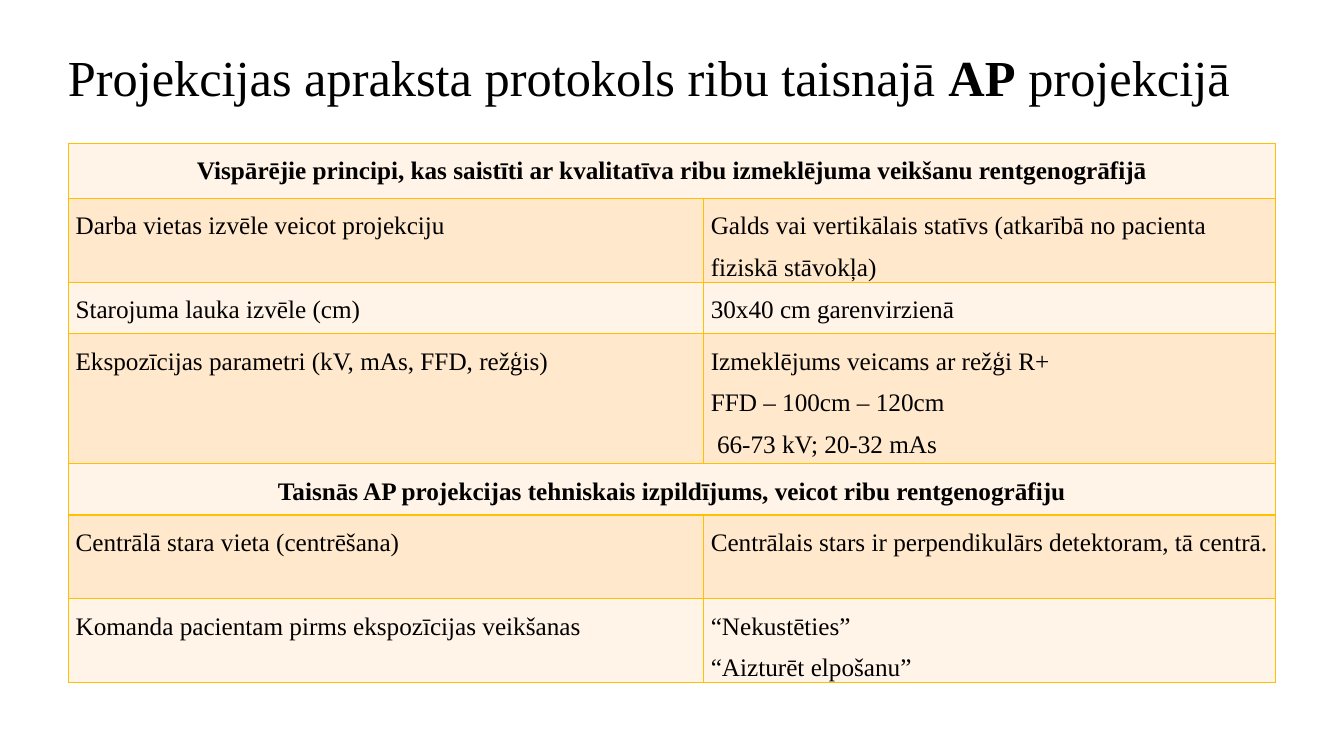
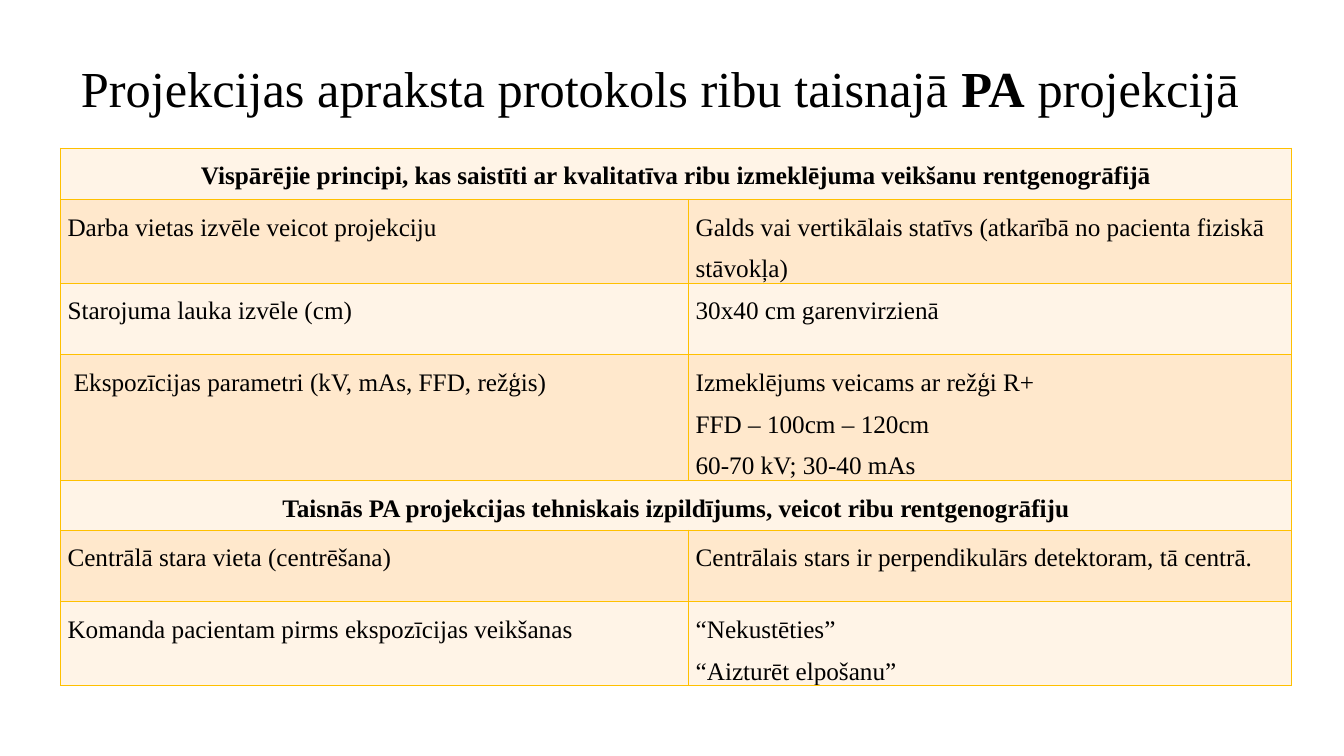
from dataclasses import dataclass

from lxml.etree import SubElement
from pptx import Presentation
from pptx.dml.color import RGBColor
from pptx.enum.text import MSO_ANCHOR as Anchor, MSO_AUTO_SIZE as AutoSize, PP_ALIGN as Align
from pptx.oxml.ns import qn
from pptx.util import Inches, Pt

SLIDE_WIDTH, SLIDE_HEIGHT = Inches(13.33), Inches(7.5)
TITLE_ONLY = 5


@dataclass(frozen=True)
class Theme:
    font: str = "Times New Roman"
    text: str = "000000"
    border: str = "FFC000"
    bands: tuple = ("FFF4E7", "FFE8CC")
    title_size: int = 36
    body_size: int = 18
    border_width: int = 1
    title_spacing: float = 0.9
    body_spacing: float = 1.5


THEME = Theme()


@dataclass(frozen=True)
class Box:
    """A region in percent of the slide's width and height."""
    left: float
    top: float
    width: float
    height: float

    def lengths(self):
        return (int(SLIDE_WIDTH * self.left / 100), int(SLIDE_HEIGHT * self.top / 100),
                int(SLIDE_WIDTH * self.width / 100), int(SLIDE_HEIGHT * self.height / 100))


@dataclass(frozen=True)
class Protocol:
    """What differs between the two projections."""
    view: str
    exposure_label: str
    exposure_values: str
    title_box: Box
    title_anchor: Anchor
    table_box: Box
    column_weights: tuple
    row_weights: tuple


PROTOCOLS = (
    Protocol("AP", "Ekspozīcijas parametri (kV, mAs, FFD, režģis)", " 66-73 kV; 20-32 mAs",
             Box(3.38, 5.33, 89.8, 19.33), Anchor.TOP, Box(5.1, 18.93, 89.8, 71.33),
             (6.3, 5.67), (0.55, 0.83, 0.51, 1.29, 0.51, 0.83, 0.83)),
    Protocol("PA", " Ekspozīcijas parametri (kV, mAs, FFD, režģis)", "60-70 kV; 30-40 mAs",
             Box(3.98, 2.4, 90.25, 19.33), Anchor.MIDDLE, Box(4.5, 19.6, 91.6, 71.07),
             (6.23, 5.98), (0.51, 0.83, 0.71, 1.25, 0.49, 0.71, 0.83)),
)


def protocol_rows(protocol):
    """Rows of one cell are section headings; the others pair a label with its lines."""
    return (
        ("Vispārējie principi, kas saistīti ar kvalitatīva ribu izmeklējuma veikšanu rentgenogrāfijā",),
        ("Darba vietas izvēle veicot projekciju",
         "Galds vai vertikālais statīvs (atkarībā no pacienta fiziskā stāvokļa)"),
        ("Starojuma lauka izvēle (cm)", "30x40 cm garenvirzienā"),
        (protocol.exposure_label,
         f"Izmeklējums veicams ar režģi R+\nFFD – 100cm – 120cm\n{protocol.exposure_values}"),
        (f"Taisnās {protocol.view} projekcijas tehniskais izpildījums, veicot ribu rentgenogrāfiju",),
        ("Centrālā stara vieta (centrēšana)",
         "Centrālais stars ir perpendikulārs detektoram, tā centrā."),
        ("Komanda pacientam pirms ekspozīcijas veikšanas", "“Nekustēties”\n“Aizturēt elpošanu”"),
    )


def format_paragraph(paragraph, size, spacing, centered, bold=None):
    paragraph.alignment = Align.CENTER if centered else Align.LEFT
    paragraph.line_spacing = spacing
    font = paragraph.font
    font.name, font.size, font.bold = THEME.font, Pt(size), bold
    font.color.rgb = RGBColor.from_string(THEME.text)


def add_title(slide, protocol):
    title = slide.shapes.title
    title.left, title.top, title.width, title.height = protocol.title_box.lengths()
    frame = title.text_frame
    frame.word_wrap = True
    frame.auto_size = AutoSize.NONE
    frame.vertical_anchor = protocol.title_anchor
    frame.margin_top = Inches(0.13) if protocol.title_anchor == Anchor.TOP else Inches(0.05)
    paragraph = frame.paragraphs[0]
    format_paragraph(paragraph, THEME.title_size, THEME.title_spacing, centered=True)
    for text, bold in (("Projekcijas apraksta protokols ribu taisnajā ", False),
                       (protocol.view, True), (" projekcijā", False)):
        run = paragraph.add_run()
        run.text, run.font.bold = text, bold


def add_borders(cell):
    # Border lines come before the fill in the cell properties
    properties = cell._tc.get_or_add_tcPr()
    for position, side in enumerate(("lnL", "lnR", "lnT", "lnB")):
        line = SubElement(properties, qn(f"a:{side}"), w=str(Pt(THEME.border_width)))
        fill = SubElement(line, qn("a:solidFill"))
        SubElement(fill, qn("a:srgbClr"), val=THEME.border)
        properties.insert(position, line)


def style_cell(cell, band):
    cell.fill.solid()
    cell.fill.fore_color.rgb = RGBColor.from_string(band)
    cell.margin_left = cell.margin_right = Inches(0.07)
    cell.margin_top = cell.margin_bottom = 0
    add_borders(cell)


def share_out(items, attribute, total, weights):
    for item, weight in zip(items, weights):
        setattr(item, attribute, int(total * weight / sum(weights)))


def add_protocol_table(slide, protocol):
    rows = protocol_rows(protocol)
    left, top, width, height = protocol.table_box.lengths()
    table = slide.shapes.add_table(len(rows), 2, left, top, width, height).table
    table.first_row = table.horz_banding = False
    share_out(table.columns, "width", width, protocol.column_weights)
    share_out(table.rows, "height", height, protocol.row_weights)

    for row_index, texts in enumerate(rows):
        is_heading = len(texts) == 1
        cells = [table.cell(row_index, column) for column in range(2)]
        for cell in cells:
            style_cell(cell, THEME.bands[row_index % 2])
        if is_heading:
            cells[0].merge(cells[1])
        for cell, text in zip(cells, texts):
            cell.text = text
            for paragraph in cell.text_frame.paragraphs:
                format_paragraph(paragraph, THEME.body_size, THEME.body_spacing,
                                 centered=is_heading, bold=is_heading)


def main():
    presentation = Presentation()
    presentation.slide_width, presentation.slide_height = SLIDE_WIDTH, SLIDE_HEIGHT
    for protocol in PROTOCOLS:
        slide = presentation.slides.add_slide(presentation.slide_layouts[TITLE_ONLY])
        add_title(slide, protocol)
        add_protocol_table(slide, protocol)
    presentation.save("out.pptx")


if __name__ == "__main__":
    main()
